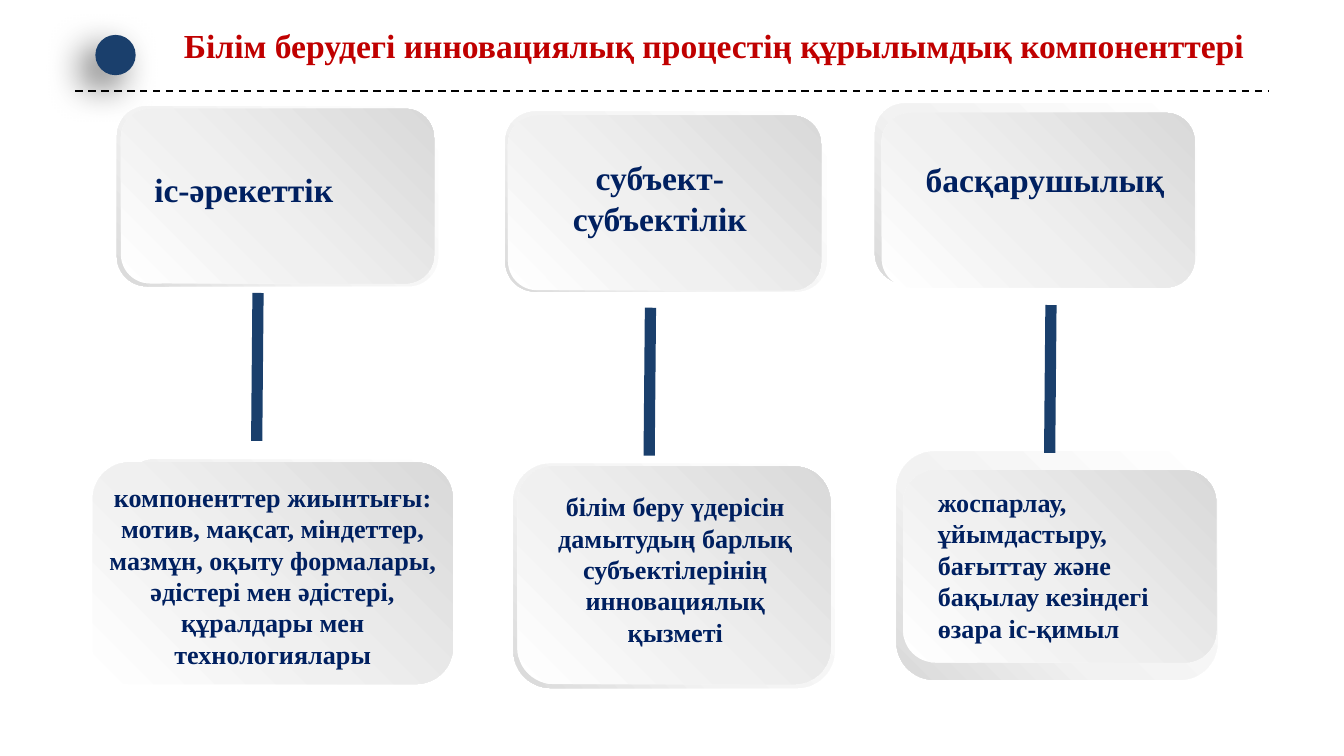
from pptx import Presentation
from pptx import util as u
from pptx.dml import color as c
from pptx.enum import dml, shapes, text
from pptx.oxml import ns, xmlchemy

NAVY, BLUE, RED = "002060", "1A3F6C", "C00000"
BACK = (225, [(0, "FFFFFF"), (62, "F2F2F2"), (100, "D9D9D9")])
FRONT = (45, [(0, "FFFFFF"), (42, "F0F0F0"), (100, "D9D9D9")])


def tone(code):
    return c.RGBColor.from_string(code)


def node(root, tag, **attrs):
    item = xmlchemy.OxmlElement(tag)
    for key, val in attrs.items():
        item.set(key, str(val))
    root.append(item)
    return item


def write(frame, words, size=18, color=NAVY, center=False, inset=None):
    frame.word_wrap = True
    frame.auto_size = text.MSO_AUTO_SIZE.SHAPE_TO_FIT_TEXT
    if inset is not None:
        frame.margin_left = frame.margin_right = u.Inches(inset)
        frame.margin_top = frame.margin_bottom = u.Inches(inset)
    para = frame.paragraphs[0]
    para.alignment = text.PP_ALIGN.CENTER if center else text.PP_ALIGN.LEFT
    run = para.add_run()
    run.text = words
    run.font.name = "Times New Roman"
    run.font.size = u.Pt(size)
    run.font.bold = True
    run.font.color.rgb = tone(color)


class Deck:
    def __init__(self, wide, ratio):
        self.file = Presentation()
        self.file.slide_width = u.Inches(wide)
        self.file.slide_height = u.Inches(wide / ratio)
        self.slide = self.file.slides.add_slide(self.file.slide_layouts[6])

    def label(self, at, words, home=None, **style):
        home = home or self.slide
        box = home.shapes.add_textbox(*map(u.Inches, at))
        write(box.text_frame, words, **style)

    def panel(self, home, at, blend):
        box = home.shapes.add_shape(
            shapes.MSO_SHAPE.ROUNDED_RECTANGLE, *map(u.Inches, at))
        box.shadow.inherit = False
        box.line.fill.background()
        box.fill.gradient()
        angle, stops = blend
        box.fill.gradient_angle = angle
        ramp = box._element.spPr.find(ns.qn("a:gradFill")).find(ns.qn("a:gsLst"))
        for old in list(ramp):
            ramp.remove(old)
        for spot, code in stops:
            stop = node(ramp, "a:gs", pos=spot * 1000)
            node(stop, "a:srgbClr", val=code)

    def card(self, back, front, at=None, words=None, size=18):
        group = self.slide.shapes.add_group_shape()
        self.panel(group, back, BACK)
        self.panel(group, front, FRONT)
        if words:
            self.label(at, words, group, size=size, center=True, inset=0)

    def line(self, start, end, color, width, dash=None):
        rule = self.slide.shapes.add_connector(
            shapes.MSO_CONNECTOR.STRAIGHT, *map(u.Inches, start + end))
        rule.line.color.rgb = tone(color)
        rule.line.width = u.Pt(width)
        if dash:
            rule.line.dash_style = dash
        node(rule._element.spPr, "a:effectLst")

    def dot(self, at, color):
        disc = self.slide.shapes.add_shape(
            shapes.MSO_SHAPE.OVAL, *map(u.Inches, at))
        disc.shadow.inherit = False
        disc.fill.solid()
        disc.fill.fore_color.rgb = tone(color)
        disc.line.fill.background()
        glow = disc._element.spPr.find(ns.qn("a:effectLst"))
        shade = node(glow, "a:outerShdw", blurRad=u.Pt(20), dist=u.Pt(10),
                     dir=135 * 60000, algn="tr", rotWithShape=0)
        ink = node(shade, "a:srgbClr", val="000000")
        node(ink, "a:alpha", val=60000)


def main():
    deck = Deck(10, 16 / 9)

    deck.card((6.51, 0.77, 2.39, 1.34), (6.56, 0.84, 2.33, 1.3),
              (6.8, 1.18, 1.95, 0.3), "басқарушылық")
    deck.line((0.56, 0.68), (9.44, 0.68), "000000", 1, dml.MSO_LINE.DASH)
    deck.dot((0.71, 0.26, 0.3, 0.3), BLUE)
    deck.label((1.27, 0.14, 8.35, 0.4),
               "Білім берудегі инновациялық процестің құрылымдық компоненттері",
               color=RED)

    deck.card((3.76, 0.83, 2.39, 1.34), (3.78, 0.86, 2.33, 1.3),
              (3.91, 1.17, 2, 0.61), "субъект-субъектілік")
    deck.card((0.87, 0.79, 2.39, 1.34), (0.9, 0.81, 2.33, 1.3))

    deck.card((0.97, 3.42, 2.39, 0.98), (0.69, 3.44, 2.68, 1.65),
              (0.78, 3.58, 2.5, 1.62),
              "компоненттер жиынтығы: мотив, мақсат, міндеттер, мазмұн, "
              "оқыту формалары, әдістері мен әдістері, құралдары мен "
              "технологиялары", size=14)
    deck.card((3.82, 3.45, 2.39, 1.67), (3.85, 3.47, 2.33, 1.62),
              (4.02, 3.65, 2.01, 1.18),
              "білім беру үдерісін дамытудың барлық субъектілерінің "
              "инновациялық қызметі", size=14)
    deck.card((6.67, 3.36, 2.39, 1.7), (6.72, 3.5, 2.33, 1.43))

    deck.label((1.05, 1.21, 2.07, 0.4), "іс-әрекеттік")
    for left, foot in [(1.91, 3.28), (4.83, 3.39), (7.81, 3.37)]:
        deck.line((left, foot), (left + 0.01, foot - 1.1), BLUE, 6)
    deck.label((6.88, 3.57, 2.11, 1.28),
               "жоспарлау, ұйымдастыру, бағыттау және бақылау кезіндегі "
               "өзара іс-қимыл", size=14)

    deck.file.save("out.pptx")


if __name__ == "__main__":
    main()
